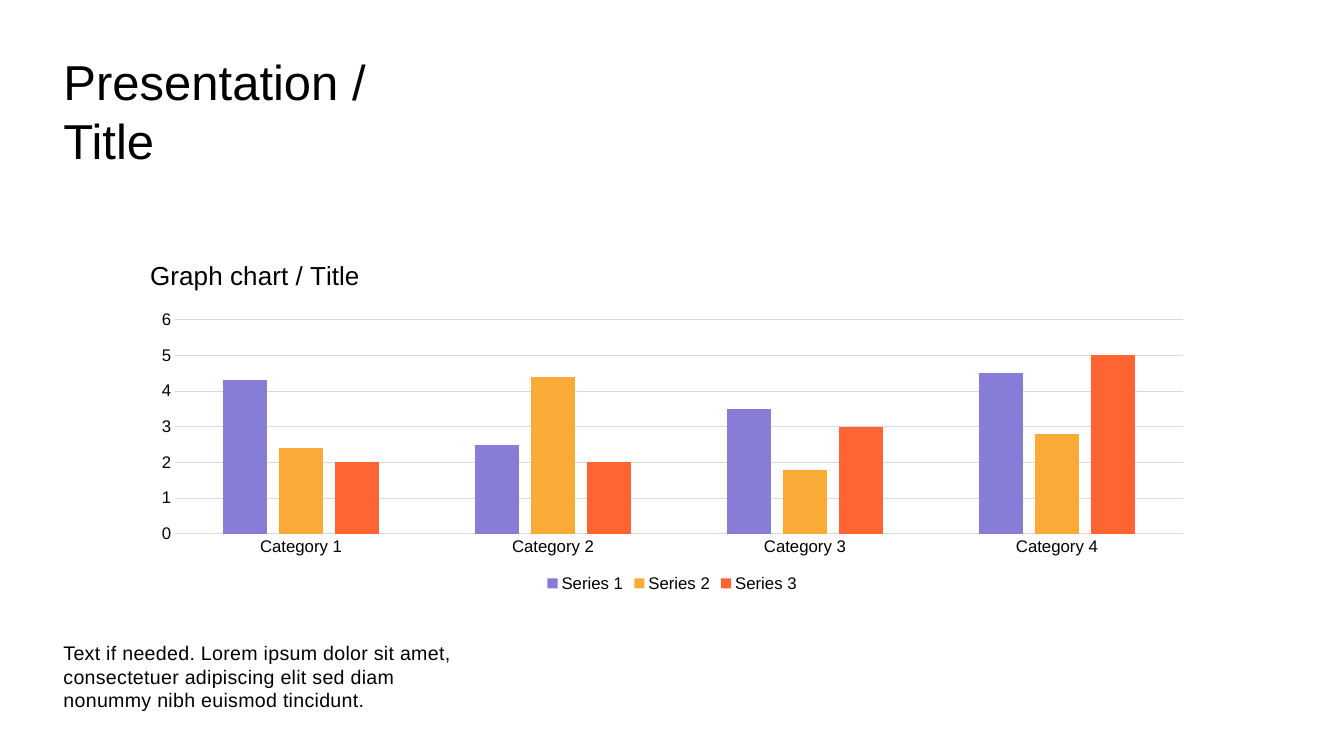
from dataclasses import dataclass

from pptx import Presentation
from pptx.chart.data import CategoryChartData as ChartData
from pptx.dml.color import RGBColor as Rgb
from pptx.enum.chart import XL_CHART_TYPE as Kind
from pptx.enum.chart import XL_LEGEND_POSITION as Place
from pptx.enum.chart import XL_TICK_MARK as Tick
from pptx.oxml import parse_xml
from pptx.oxml.ns import nsdecls, qn
from pptx.util import Cm, Pt


@dataclass(frozen=True)
class Theme:
    face: str = "Arial"
    ink: Rgb = Rgb(0, 0, 0)
    grid: Rgb = Rgb(0xD9, 0xD9, 0xD9)
    bars: tuple = ("877DD7", "FAAA37", "FF6432")
    title: float = 35
    head: float = 18.6
    body: float = 14
    label: float = 12
    rule: float = 0.75
    lead: float = 1.2


THEME = Theme()
GROUPS = [f"Category {n}" for n in range(1, 5)]
SERIES = {
    "Series 1": (4.3, 2.5, 3.5, 4.5),
    "Series 2": (2.4, 4.4, 1.8, 2.8),
    "Series 3": (2, 2, 3, 5),
}


def style(font, size):
    font.name = THEME.face
    font.size = Pt(size)
    font.bold = False
    font.color.rgb = THEME.ink


def add_text(slide, text, box, size, space=0):
    frame = slide.shapes.add_textbox(*map(Cm, box)).text_frame
    frame.word_wrap = True
    frame.text = text
    for para in frame.paragraphs:
        para.line_spacing = Pt(size * THEME.lead)
        for run in para.runs:
            style(run.font, size)
            if space:
                run.font._element.set("spc", str(space))


def set_layout(parent, index, **spots):
    """Place a chart part by fractions of the chart's size."""
    old = parent.find(qn("c:layout"))
    if old is not None:
        parent.remove(old)
    inner = '<c:layoutTarget val="inner"/>' if "w" in spots else ""
    modes = "".join(f'<c:{key}Mode val="edge"/>' for key in "xy")
    sizes = "".join(f'<c:{key} val="{val}"/>' for key, val in spots.items())
    parent.insert(index, parse_xml(
        f'<c:layout {nsdecls("c")}><c:manualLayout>{inner}{modes}{sizes}'
        "</c:manualLayout></c:layout>"))


def set_line(line):
    line.color.rgb = THEME.grid
    line.width = Pt(THEME.rule)


def set_axes(chart):
    for axis in (chart.category_axis, chart.value_axis):
        axis.major_tick_mark = axis.minor_tick_mark = Tick.NONE
        style(axis.tick_labels.font, THEME.label)
    set_line(chart.category_axis.format.line)
    scale = chart.value_axis
    scale.minimum_scale, scale.maximum_scale, scale.major_unit = 0, 6, 1
    scale.format.line.fill.background()
    set_line(scale.major_gridlines.format.line)


def add_bars(slide, title, box):
    data = ChartData(number_format="General")
    data.categories = GROUPS
    for name, vals in SERIES.items():
        data.add_series(name, vals)
    chart = slide.shapes.add_chart(
        Kind.COLUMN_CLUSTERED, *map(Cm, box), data).chart
    style(chart.font, THEME.label)

    # Heading
    chart.has_title = True
    head = chart.chart_title
    head.text_frame.text = title
    style(head.text_frame.paragraphs[0].runs[0].font, THEME.head)
    head.include_in_layout = False
    set_layout(head.element, 1, x=0.005, y=0.02)

    # Bars and axes
    plot = chart.plots[0]
    plot.vary_by_categories = False
    plot.gap_width, plot.overlap = 219, -27
    for row, tint in zip(plot.series, THEME.bars):
        row.format.fill.solid()
        row.format.fill.fore_color.rgb = Rgb.from_string(tint)
    set_axes(chart)
    area = chart.element.find(".//" + qn("c:plotArea"))
    set_layout(area, 0, x=0.033, y=0.209, w=0.947, h=0.612)

    # Legend
    chart.has_legend = True
    chart.legend.position = Place.BOTTOM
    chart.legend.include_in_layout = False
    style(chart.legend.font, THEME.label)


def main():
    deck = Presentation()
    deck.slide_width, deck.slide_height = Cm(33.87), Cm(19.05)
    slide = deck.slides.add_slide(deck.slide_layouts[6])
    add_text(slide, "Presentation /\nTitle",
             (1.35, 1.17, 13.59, 3.51), THEME.title)
    add_text(slide, "Text if needed. Lorem ipsum dolor sit amet, consectetuer "
             "adipiscing elit sed diam nonummy nibh euismod tincidunt.",
             (1.35, 16.03, 11.1, 2.39), THEME.body, space=20)
    add_bars(slide, "Graph chart / Title", (3.53, 6.22, 26.82, 8.81))
    deck.save("out.pptx")


if __name__ == "__main__":
    main()
